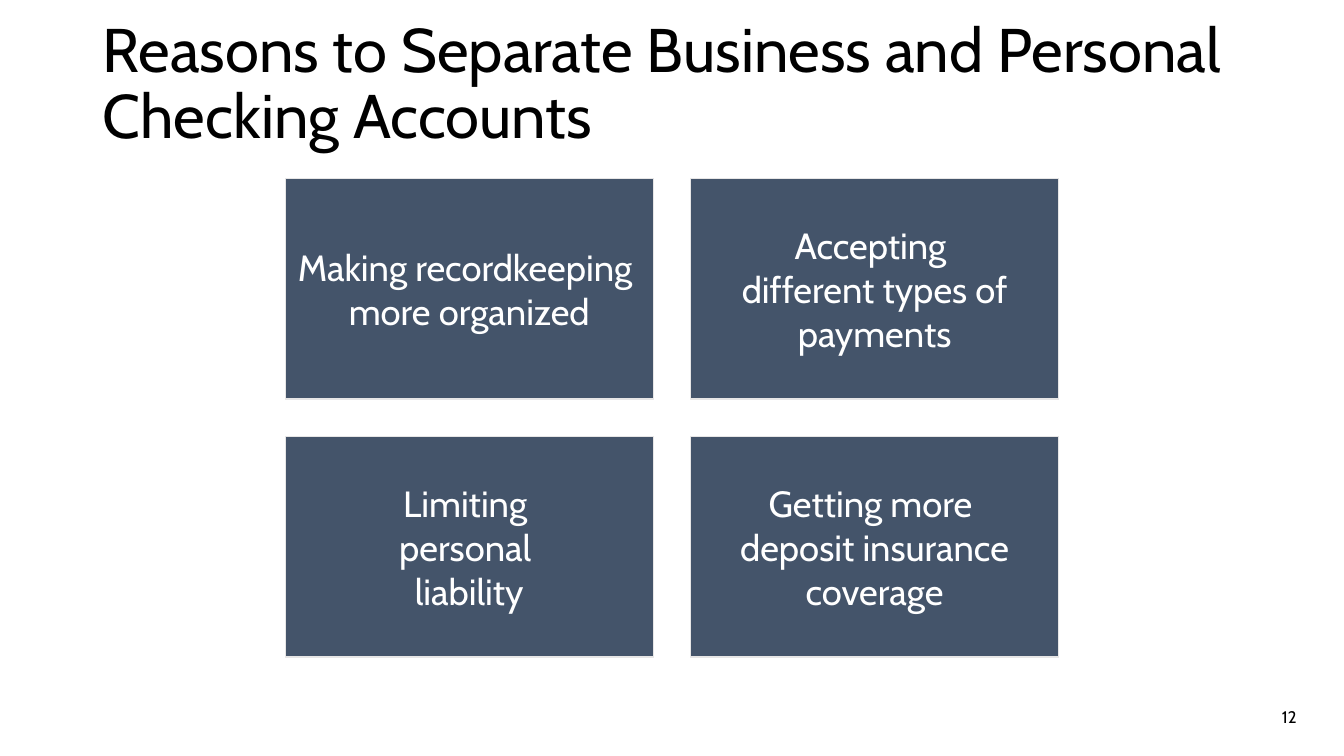
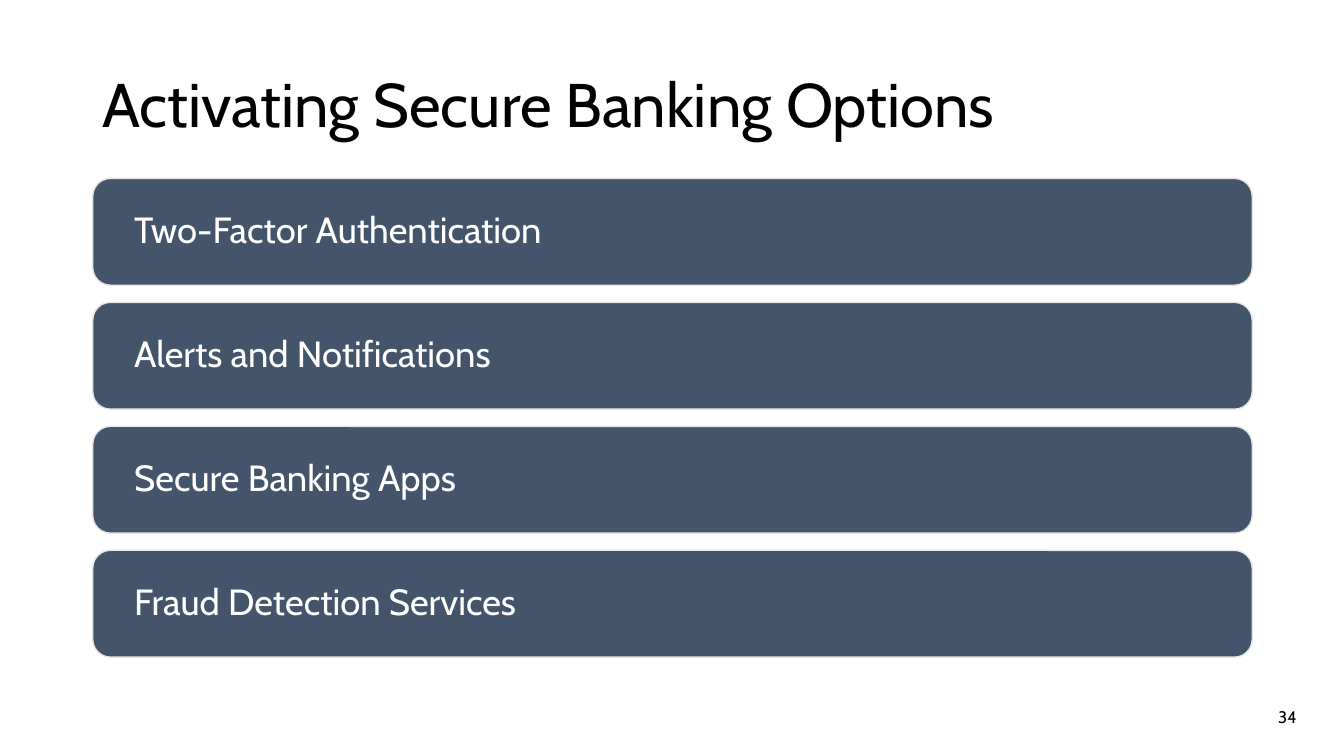
from dataclasses import dataclass

from pptx import Presentation
from pptx.dml.color import RGBColor
from pptx.enum.shapes import MSO_SHAPE
from pptx.enum.text import MSO_ANCHOR, PP_ALIGN
from pptx.util import Pt

RECT, ROUNDED = MSO_SHAPE.RECTANGLE, MSO_SHAPE.ROUNDED_RECTANGLE
LEFT, CENTER, RIGHT = PP_ALIGN.LEFT, PP_ALIGN.CENTER, PP_ALIGN.RIGHT
MIDDLE, BOTTOM = MSO_ANCHOR.MIDDLE, MSO_ANCHOR.BOTTOM


@dataclass(frozen=True)
class Theme:
    font: str = "Cabin"
    ink: str = "000000"
    light: str = "FFFFFF"
    panel: str = "44546A"
    edge: str = "E7E6E6"
    title: int = 44
    body: int = 26
    footer: int = 12


THEME = Theme()
PX = 9144  # EMU per px, 100 px to the inch

# Content: one tuple of lines per panel; a trailing space shifts a centred line
SLIDES = [
    {
        "title": "Reasons to Separate Business and Personal Checking Accounts",
        "title_height": 156,
        "number": 12,
        "panels": [
            ("Making recordkeeping ", "more organized"),
            ("Accepting ", "different types of payments"),
            ("Limiting ", "personal ", "liability"),
            ("Getting more ", "deposit insurance coverage"),
        ],
        "layout": "cards",
    },
    {
        "title": "Activating Secure Banking Options",
        "title_height": 145,
        "number": 34,
        "panels": [
            ("Two-Factor Authentication",),
            ("Alerts and Notifications",),
            ("Secure Banking Apps",),
            ("Fraud Detection Services",),
        ],
        "layout": "bars",
    },
]

# Panel grids: origin, panel size, gaps and text style
LAYOUTS = {
    "cards": dict(shape=RECT, columns=2, origin=(283, 177), size=(365, 219),
                  gap=(37, 37), margins=(11, 11), align=CENTER, spacing=1.0),
    "bars": dict(shape=ROUNDED, columns=1, origin=(92, 177), size=(1150, 106),
                 gap=(0, 17), margins=(36, 11), align=LEFT, spacing=0.9),
}


def px(*lengths):
    return [length * PX for length in lengths]


def write(sp, lines, size, color, align=LEFT, anchor=MIDDLE, spacing=1.0,
          margins=(10, 5)):
    tf = sp.text_frame
    side, edge = px(*margins)
    frame = dict(word_wrap=True, vertical_anchor=anchor, margin_left=side,
                 margin_right=side, margin_top=edge, margin_bottom=edge)
    for name, value in frame.items():
        setattr(tf, name, value)
    for i, line in enumerate(lines):
        p = tf.add_paragraph() if i else tf.paragraphs[0]
        p.alignment, p.line_spacing = align, spacing
        r = p.add_run()
        r.text = line
        for name, value in dict(name=THEME.font, size=Pt(size)).items():
            setattr(r.font, name, value)
        r.font.color.rgb = RGBColor.from_string(color)


def add_panels(s, panels, shape, columns, origin, size, gap, **style):
    for i, lines in enumerate(panels):
        row, column = divmod(i, columns)
        x, y = (start + n * (length + space) for start, n, length, space
                in zip(origin, (column, row), size, gap))
        sp = s.shapes.add_shape(shape, *px(x, y, *size))
        sp.shadow.inherit = False
        sp.fill.solid()
        sp.fill.fore_color.rgb = RGBColor.from_string(THEME.panel)
        sp.line.color.rgb = RGBColor.from_string(THEME.edge)
        sp.line.width = Pt(1)
        write(sp, lines, THEME.body, THEME.light, **style)


def add_slide(prs, content):
    s = prs.slides.add_slide(prs.slide_layouts[6])
    # Title
    title = s.shapes.add_textbox(*px(92, 0, 1150, content["title_height"]))
    write(title, [content["title"]], THEME.title, THEME.ink,
          anchor=BOTTOM, spacing=0.9)
    # Panels
    add_panels(s, content["panels"], **LAYOUTS[content["layout"]])
    # Slide number
    number = s.shapes.add_textbox(*px(996, 691, 300, 40))
    write(number, [str(content["number"])], THEME.footer, THEME.ink, align=RIGHT)


def main():
    prs = Presentation()
    prs.slide_width, prs.slide_height = px(1333, 750)
    for content in SLIDES:
        add_slide(prs, content)
    prs.save("out.pptx")


if __name__ == "__main__":
    main()
